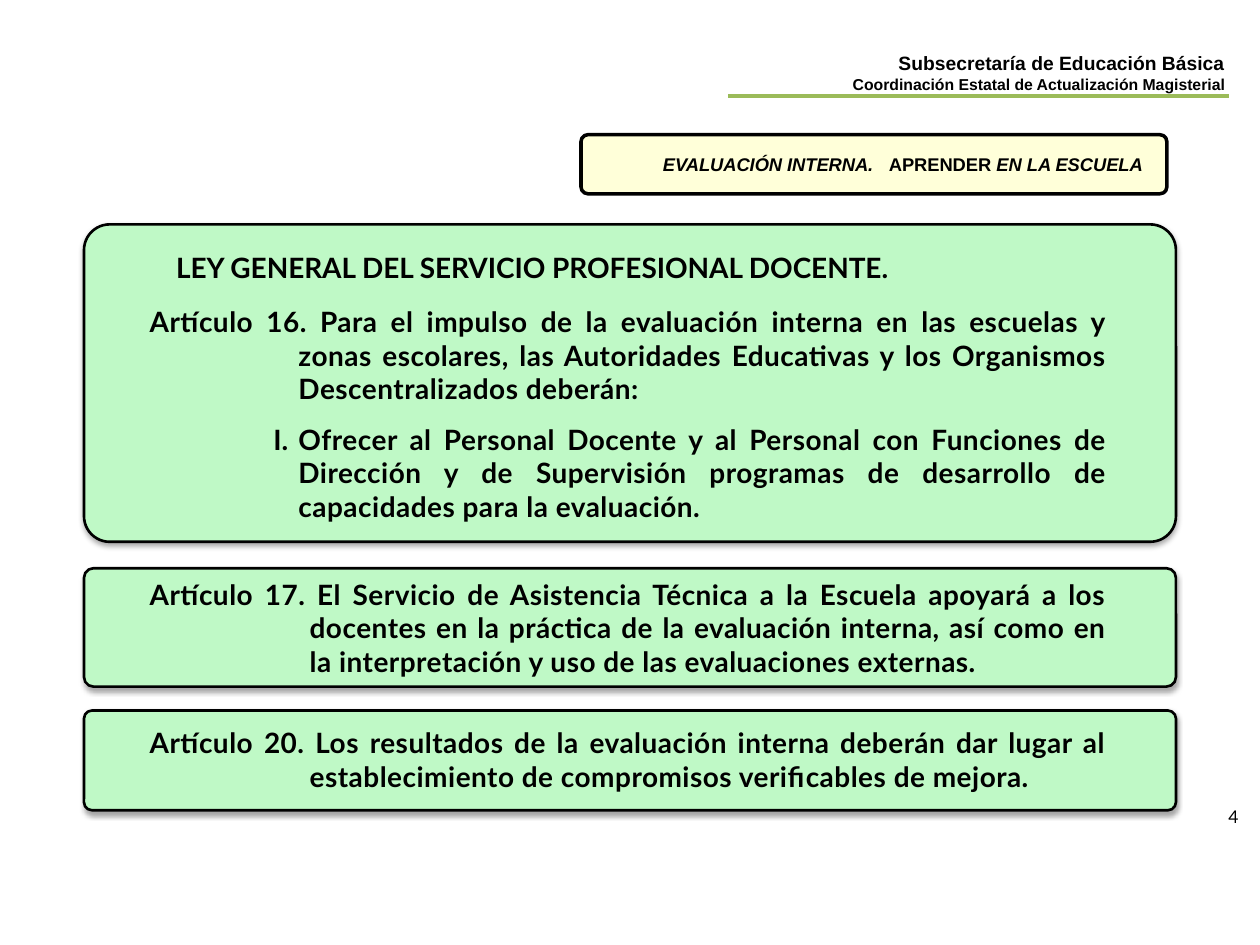
from dataclasses import dataclass

from lxml.etree import SubElement
from pptx import Presentation
from pptx.dml.color import RGBColor
from pptx.enum.shapes import MSO_CONNECTOR, MSO_SHAPE
from pptx.enum.text import MSO_ANCHOR, PP_ALIGN
from pptx.oxml.ns import qn
from pptx.slide import Slide
from pptx.util import Pt

BLACK = RGBColor(0x00, 0x00, 0x00)
MINT = RGBColor(0xBF, 0xF9, 0xC6)
CREAM = RGBColor(0xFF, 0xFF, 0xD9)
OLIVE = RGBColor(0x9B, 0xBB, 0x59)

BODY = {"name": "Lato", "size": Pt(16), "bold": True}
BADGE = {"name": "Arial", "size": Pt(10.5), "bold": True, "italic": True}
HEADING = {"name": "Arial", "size": Pt(11), "bold": True}
SUBHEADING = HEADING | {"size": Pt(9)}
PAGE_NUMBER = {"name": "Lato", "size": Pt(10)}


@dataclass(frozen=True)
class Box:
    left: float
    top: float
    width: float
    height: float

    def lengths(self) -> tuple[Pt, Pt, Pt, Pt]:
        return Pt(self.left), Pt(self.top), Pt(self.width), Pt(self.height)


@dataclass(frozen=True)
class TextRun:
    text: str
    font: dict
    spacing: float = 0


@dataclass(frozen=True)
class TextParagraph:
    runs: tuple[TextRun, ...]
    alignment: PP_ALIGN = PP_ALIGN.LEFT
    margin: float = 0
    indent: float = 0
    space_before: float = 0
    numbering: str = ""


@dataclass(frozen=True)
class Panel:
    box: Box
    fill: RGBColor
    line_width: float
    corner: float
    has_shadow: bool


@dataclass(frozen=True)
class TextBlock:
    box: Box
    paragraphs: tuple[TextParagraph, ...]
    anchor: MSO_ANCHOR = MSO_ANCHOR.TOP


def article(text: str, margin: float, indent: float, space_before: float = 0,
            numbering: str = "") -> TextParagraph:
    run = TextRun(text, BODY, 0.3)
    return TextParagraph((run,), PP_ALIGN.JUSTIFY, margin, indent, space_before, numbering)


def card(top: float, height: float) -> Panel:
    return Panel(Box(48, top, 624, height), MINT, 1.5, 0.081, True)


def article_block(top: float, height: float, *paragraphs: TextParagraph) -> TextBlock:
    return TextBlock(Box(78.5, top, 561.6, height), paragraphs)


def draw_panel(slide: Slide, panel: Panel) -> None:
    shape = slide.shapes.add_shape(MSO_SHAPE.ROUNDED_RECTANGLE, *panel.box.lengths())
    shape.adjustments[0] = panel.corner
    shape.fill.solid()
    shape.fill.fore_color.rgb = panel.fill
    shape.line.color.rgb = BLACK
    shape.line.width = Pt(panel.line_width)
    shape.shadow.inherit = False
    if panel.has_shadow:
        effects = shape._element.spPr.find(qn("a:effectLst"))
        shadow = SubElement(effects, qn("a:outerShdw"), blurRad=str(Pt(3.1)),
                            dist=str(Pt(1.8)), dir="5400000", rotWithShape="0")
        color = SubElement(shadow, qn("a:srgbClr"), val=str(BLACK))
        SubElement(color, qn("a:alpha"), val="35000")


def draw_text(slide: Slide, block: TextBlock) -> None:
    frame = slide.shapes.add_textbox(*block.box.lengths()).text_frame
    frame.word_wrap = True
    frame.vertical_anchor = block.anchor
    for index, content in enumerate(block.paragraphs):
        paragraph = frame.add_paragraph() if index else frame.paragraphs[0]
        paragraph.alignment = content.alignment
        properties = paragraph._p.get_or_add_pPr()
        properties.set("marL", str(Pt(content.margin)))
        properties.set("indent", str(Pt(content.indent)))
        if content.numbering:
            SubElement(properties, qn("a:buFont"), typeface="+mj-lt")
            SubElement(properties, qn("a:buAutoNum"), type=content.numbering)
        if content.space_before:
            paragraph.space_before = Pt(content.space_before)
        for item in content.runs:
            run = paragraph.add_run()
            run.text = item.text
            run.font.color.rgb = BLACK
            for attribute, value in item.font.items():
                setattr(run.font, attribute, value)
            if item.spacing:
                run._r.get_or_add_rPr().set("spc", str(round(item.spacing * 100)))


def draw_rule(slide: Slide, start: float, end: float, top: float) -> None:
    rule = slide.shapes.add_connector(
        MSO_CONNECTOR.STRAIGHT, Pt(start), Pt(top), Pt(end), Pt(top))
    rule.line.color.rgb = OLIVE
    rule.line.width = Pt(2.25)
    SubElement(rule._element.spPr, qn("a:effectLst"))


PANELS = (
    card(128.2, 181.4),
    card(324.7, 67.7),
    card(406, 57),
    Panel(Box(332, 77, 334.8, 33.8), CREAM, 2, 0.117, False),
)

TEXT_BLOCKS = (
    TextBlock(Box(290, 26, 417, 32), (
        TextParagraph((TextRun("Subsecretaría de Educación Básica", HEADING),), PP_ALIGN.RIGHT),
        TextParagraph((TextRun("Coordinación Estatal de Actualización Magisterial",
                               SUBHEADING),), PP_ALIGN.RIGHT),
    )),
    TextBlock(Box(342.7, 77, 317.5, 33.8), (
        TextParagraph((
            TextRun("EVALUACIÓN INTERNA.", BADGE),
            TextRun(" ", BADGE, 5.8),
            TextRun("APRENDER", BADGE | {"italic": False}),
            TextRun(" EN LA ESCUELA", BADGE),
        ), PP_ALIGN.RIGHT),
    ), MSO_ANCHOR.MIDDLE),
    TextBlock(Box(93.6, 139.7, 533, 26.6), (
        TextParagraph((TextRun("LEY GENERAL DEL SERVICIO PROFESIONAL DOCENTE.", BODY),)),
    )),
    article_block(
        170.6, 133.2,
        article("Artículo 16. Para el impulso de la evaluación interna en las escuelas y zonas "
                "escolares, las Autoridades Educativas y los Organismos Descentralizados "
                "deberán:", 85, -85),
        article("Ofrecer al Personal Docente y al Personal con Funciones de Dirección y de "
                "Supervisión programas de desarrollo de capacidades para la evaluación.",
                85, -14.4, 9.6, "romanUcPeriod")),
    article_block(
        326.2, 65.5,
        article("Artículo 17. El Servicio de Asistencia Técnica a la Escuela apoyará a los "
                "docentes en la práctica de la evaluación interna, así como en la "
                "interpretación y uso de las evaluaciones externas.", 91.4, -91.4)),
    article_block(
        411.1, 46,
        article("Artículo 20. Los resultados de la evaluación interna deberán dar lugar al "
                "establecimiento de compromisos verificables de mejora.", 91.4, -91.4)),
    TextBlock(Box(694.8, 457.2, 25.2, 19.4), (
        TextParagraph((TextRun("4", PAGE_NUMBER),)),
    )),
)


def main() -> None:
    presentation = Presentation()
    presentation.slide_width = Pt(720)
    presentation.slide_height = Pt(540)
    slide = presentation.slides.add_slide(presentation.slide_layouts[6])
    draw_rule(slide, 702, 416, 54.7)
    for panel in PANELS:
        draw_panel(slide, panel)
    for block in TEXT_BLOCKS:
        draw_text(slide, block)
    presentation.save("out.pptx")


if __name__ == "__main__":
    main()
